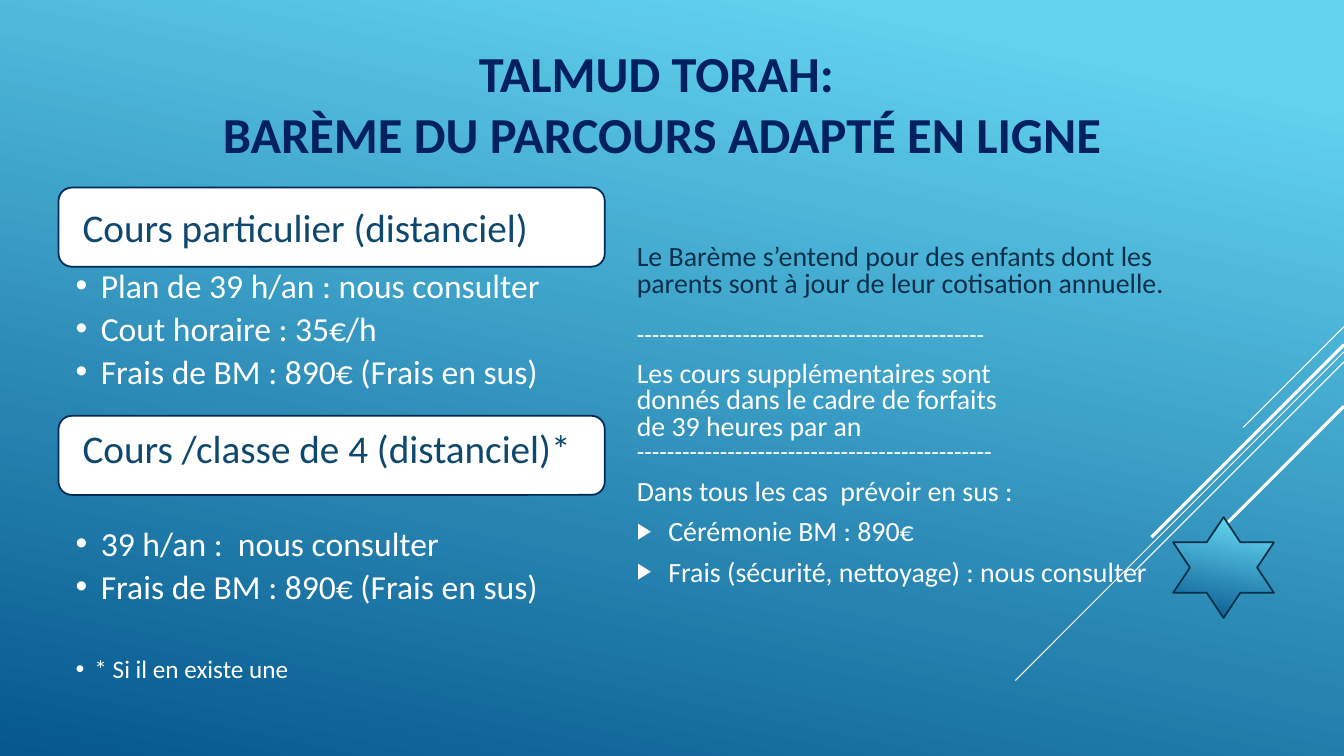
"""Build the slide presenting the fees of the adapted online course."""
from dataclasses import dataclass

import pptx
import pptx.dml.color
import pptx.enum.shapes
import pptx.enum.text
import pptx.oxml.ns
import pptx.util
from lxml import etree

Pt = pptx.util.Pt
RGB = pptx.dml.color.RGBColor
Align = pptx.enum.text.PP_ALIGN
Anchor = pptx.enum.text.MSO_ANCHOR
Preset = pptx.enum.shapes.MSO_SHAPE
qn = pptx.oxml.ns.qn

WHITE = RGB(0xFF, 0xFF, 0xFF)
SKY = RGB(0x62, 0xD2, 0xEF)
OCEAN = RGB(0x05, 0x57, 0x8D)
TITLE_NAVY = RGB(0x00, 0x20, 0x60)
CARD_EDGE = RGB(0x01, 0x29, 0x57)
CARD_TEXT = RGB(0x0F, 0x48, 0x6F)
NOTE_TEXT = RGB(0x09, 0x30, 0x4A)
STAR_EDGE = RGB(0x02, 0x30, 0x46)
FONT = "Calibri"
SLIDE_W, SLIDE_H = 960, 540
COLUMN_LEFT, COLUMN_W = 41.8, 390.2


@dataclass(frozen=True)
class Box:
    left: float
    top: float
    width: float
    height: float

    def lengths(self) -> tuple:
        return Pt(self.left), Pt(self.top), Pt(self.width), Pt(self.height)


@dataclass(frozen=True)
class Para:
    text: str
    size: float
    color: RGB = WHITE
    bold: bool = False
    align: Align = Align.LEFT
    spacing: float = 1.0
    before: float = 0
    bullet: str = ""
    indent: float = 0
    bullet_pct: int = 100


@dataclass(frozen=True)
class Course:
    label: str
    card_top: float
    label_top: float
    list_top: float
    list_height: float
    items: tuple[Para, ...]


@dataclass(frozen=True)
class Ray:
    top: float
    run: float
    weight: float


def item(text: str, before: float = 4.8, size: float = 24, indent: float = 18) -> Para:
    return Para(text, size, spacing=0.9, before=before, bullet="•", indent=indent)


def note(text: str, before: float = 10, size: float = 19.9, **style) -> Para:
    return Para(text, size, spacing=0.8, before=before, **style)


TITLE = (
    Para("TALMUD TORAH: ", 36, TITLE_NAVY, True, Align.CENTER),
    Para("BARÈME DU PARCOURS ADAPTÉ EN LIGNE", 36, TITLE_NAVY, True, Align.CENTER),
)
ARROW = dict(bullet="▶", indent=22.5, bullet_pct=80)
NOTES = (
    note("Le Barème s’entend pour des enfants dont les parents sont à jour "
         "de leur cotisation annuelle.", before=0, color=NOTE_TEXT),
    note("-" * 46, before=18, size=17.6),
    note("Les cours supplémentaires sont\ndonnés dans le cadre de forfaits\n"
         "de 39 heures par an"),
    note("-" * 47, before=0, size=17.6),
    note("Dans tous les cas  prévoir en sus :", align=Align.JUSTIFY),
    note("Cérémonie BM : 890€", **ARROW),
    note("Frais (sécurité, nettoyage) : nous consulter", **ARROW),
)
BM_FEE = item("Frais de BM : 890€ (Frais en sus)")
COURSES = (
    Course("Cours particulier (distanciel)", 134, 138.2, 190, 127.4, (
        item("Plan de 39 h/an : nous consulter", before=0),
        item("Cout horaire : 35€/h"),
        BM_FEE,
    )),
    Course("Cours /classe de 4 (distanciel)*", 297, 296, 374.4, 121.7, (
        item("39 h/an :  nous consulter", before=0),
        BM_FEE,
        item("* Si il en existe une", before=36, size=18, indent=13.5),
    )),
)
RAYS = (
    Ray(233.3, 72, 0.75),
    Ray(251.3, 234.7, 0.75),
    Ray(258.5, 149.3, 0.75),
    Ray(246.2, 137.5, 2.25),
    Ray(290.2, 100, 2.25),
)


def add_gradient(fill) -> None:
    fill.gradient()
    fill.gradient_angle = 258
    for stop, position, color in zip(fill.gradient_stops, (0.1, 1), (SKY, OCEAN)):
        stop.position = position
        stop.color.rgb = color


def add_bullet(p, para: Para) -> None:
    pPr = p._p.get_or_add_pPr()
    pPr.set("marL", str(Pt(para.indent)))
    pPr.set("indent", str(-Pt(para.indent)))
    color = etree.SubElement(pPr, qn("a:buClr"))
    etree.SubElement(color, qn("a:srgbClr"), val=str(WHITE))
    etree.SubElement(pPr, qn("a:buSzPct"), val=str(para.bullet_pct * 1000))
    etree.SubElement(pPr, qn("a:buFont"), typeface="Arial")
    etree.SubElement(pPr, qn("a:buChar"), char=para.bullet)


def write(tf, paras: tuple[Para, ...], insets: tuple, anchor=Anchor.TOP) -> None:
    tf.word_wrap = True
    tf.auto_size = pptx.enum.text.MSO_AUTO_SIZE.NONE
    tf.vertical_anchor = anchor
    tf.margin_left, tf.margin_top, tf.margin_right, tf.margin_bottom = map(Pt, insets)
    for i, para in enumerate(paras):
        p = tf.add_paragraph() if i else tf.paragraphs[0]
        p.alignment = para.align
        p.line_spacing = para.spacing
        p.space_before = Pt(para.before)
        if para.bullet:
            add_bullet(p, para)
        for j, line in enumerate(para.text.split("\n")):
            if j:
                p.add_line_break()
            r = p.add_run()
            r.text = line
            r.font.name = FONT
            r.font.size = Pt(para.size)
            r.font.bold = para.bold
            r.font.color.rgb = para.color


def add_text(s, box: Box, paras: tuple[Para, ...], insets: tuple, anchor=Anchor.TOP) -> None:
    write(s.shapes.add_textbox(*box.lengths()).text_frame, paras, insets, anchor)


def add_preset(s, preset: Preset, box: Box, edge: RGB):
    sp = s.shapes.add_shape(preset, *box.lengths())
    sp.shadow.inherit = False
    sp.line.color.rgb = edge
    sp.line.width = Pt(1.25)
    return sp


def add_ray(s, ray: Ray) -> None:
    cx = s.shapes.add_connector(
        pptx.enum.shapes.MSO_CONNECTOR.STRAIGHT, Pt(SLIDE_W), Pt(ray.top),
        Pt(SLIDE_W - ray.run), Pt(ray.top + ray.run))
    cx.line.color.rgb = WHITE
    cx.line.width = Pt(ray.weight)
    etree.SubElement(cx._element.spPr, qn("a:effectLst"))


def add_course(s, course: Course) -> None:
    card = add_preset(s, Preset.ROUNDED_RECTANGLE,
                      Box(COLUMN_LEFT, course.card_top, COLUMN_W, 56.5), CARD_EDGE)
    card.fill.solid()
    card.fill.fore_color.rgb = WHITE
    add_text(s, Box(50.4, course.label_top, 384.5, 51.5),
             (Para(course.label, 28, CARD_TEXT, spacing=0.9),), (8.6,) * 4, Anchor.MIDDLE)
    add_text(s, Box(COLUMN_LEFT, course.list_top, COLUMN_W, course.list_height),
             course.items, (12.2, 2.2, 13.7, 2.2))


def main() -> None:
    prs = pptx.Presentation()
    prs.slide_width, prs.slide_height = Pt(SLIDE_W), Pt(SLIDE_H)
    s = prs.slides.add_slide(prs.slide_layouts[5])
    add_gradient(s.background.fill)
    title = s.shapes.title
    title.left, title.top, title.width, title.height = Box(0, 26.6, 946, 94.3).lengths()
    write(title.text_frame, TITLE, (7.2, 3.6, 7.2, 3.6))
    for ray in RAYS:
        add_ray(s, ray)
    star = add_preset(s, Preset.STAR_6_POINT, Box(838, 369.4, 72, 72), STAR_EDGE)
    add_gradient(star.fill)
    add_text(s, Box(447.8, 154, 420.5, 287.3), NOTES, (7.2, 3.6, 7.2, 3.6), Anchor.MIDDLE)
    for course in COURSES:
        add_course(s, course)
    prs.save("out.pptx")


if __name__ == "__main__":
    main()
